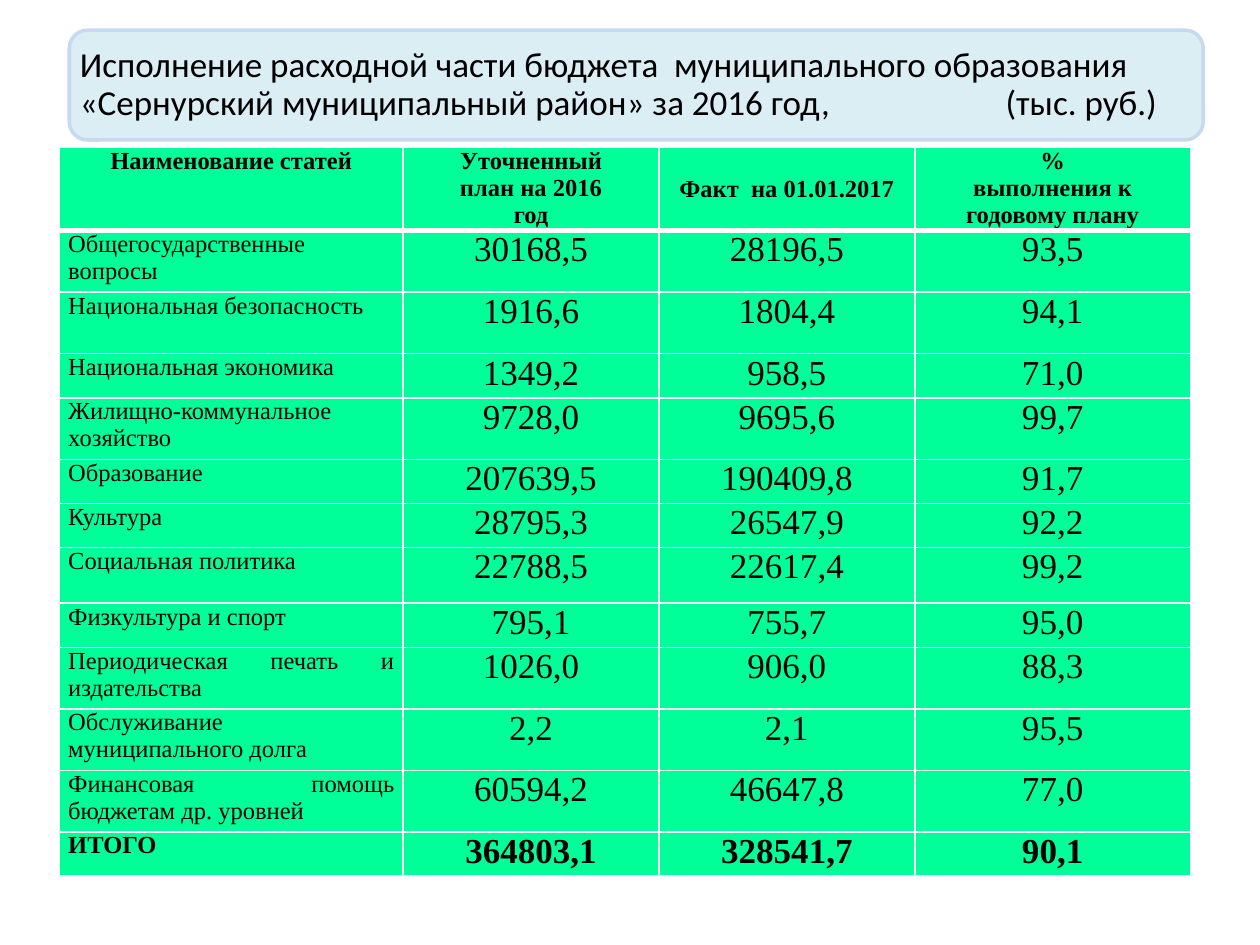
from typing import NamedTuple

from lxml.etree import SubElement
from pptx import Presentation
from pptx.dml.color import RGBColor
from pptx.enum.shapes import MSO_SHAPE
from pptx.enum.text import MSO_ANCHOR, MSO_AUTO_SIZE, PP_ALIGN
from pptx.oxml.ns import qn
from pptx.table import _Cell
from pptx.util import Pt

BLACK = RGBColor(0x00, 0x00, 0x00)
WHITE = RGBColor(0xFF, 0xFF, 0xFF)
MINT = RGBColor(0x00, 0xFF, 0x99)
PALE_BLUE = RGBColor(0xDB, 0xEE, 0xF4)
EDGE_BLUE = RGBColor(0xC6, 0xD9, 0xF1)

TITLE = (
    "Исполнение расходной части бюджета  муниципального образования "
    "«Сернурский муниципальный район» за 2016 год,\t(тыс. руб.)"
)
HEADINGS = (
    "Наименование статей",
    "Уточненный\nплан на 2016\nгод",
    "Факт  на 01.01.2017",
    "%\nвыполнения к\nгодовому плану",
)
COLUMN_WIDTHS = (196.4, 146.2, 146.2, 157.6)
HEADER_HEIGHT = 47.4
TALL, MEDIUM, SHORT = 35.2, 31.8, 25.2
LEFT, CENTER, JUSTIFY = PP_ALIGN.LEFT, PP_ALIGN.CENTER, PP_ALIGN.JUSTIFY


class Expense(NamedTuple):
    article: str
    plan: str
    fact: str
    percent: str
    height: float
    align: PP_ALIGN = JUSTIFY
    bold: bool = False


EXPENSES = (
    Expense("Общегосударственные вопросы", "30168,5", "28196,5", "93,5", TALL, LEFT),
    Expense("Национальная безопасность", "1916,6", "1804,4", "94,1", TALL, LEFT),
    Expense("Национальная экономика", "1349,2", "958,5", "71,0", SHORT, LEFT),
    Expense("Жилищно-коммунальное хозяйство", "9728,0", "9695,6", "99,7", TALL, LEFT),
    Expense("Образование", "207639,5", "190409,8", "91,7", SHORT),
    Expense("Культура", "28795,3", "26547,9", "92,2", SHORT),
    Expense("Социальная политика", "22788,5", "22617,4", "99,2", MEDIUM),
    Expense("Физкультура и спорт", "795,1", "755,7", "95,0", SHORT),
    Expense("Периодическая печать и издательства", "1026,0", "906,0", "88,3", TALL),
    Expense("Обслуживание муниципального долга", "2,2", "2,1", "95,5", TALL),
    Expense("Финансовая помощь бюджетам др. уровней", "60594,2", "46647,8", "77,0", TALL),
    Expense("ИТОГО", "364803,1", "328541,7", "90,1", SHORT, bold=True),
)


def set_borders(cell: _Cell, top: float, bottom: float) -> None:
    properties = cell._tc.get_or_add_tcPr()
    for side, width in (("L", 1), ("R", 1), ("T", top), ("B", bottom)):
        border = SubElement(properties, qn(f"a:ln{side}"), w=str(Pt(width)))
        paint = SubElement(border, qn("a:solidFill"))
        SubElement(paint, qn("a:srgbClr"), val=str(WHITE))


def fill_cell(cell: _Cell, text: str, size: float, align: PP_ALIGN, bold: bool,
              top: float = 1, bottom: float = 1) -> None:
    set_borders(cell, top, bottom)
    cell.fill.solid()
    cell.fill.fore_color.rgb = MINT
    cell.margin_left = cell.margin_right = Pt(5)
    cell.margin_top = cell.margin_bottom = Pt(0)
    cell.text = text
    for paragraph in cell.text_frame.paragraphs:
        paragraph.alignment = align
        font = paragraph.font
        font.name, font.size, font.bold = "Times New Roman", Pt(size), bold
        font.color.rgb = BLACK


def add_title(slide) -> None:
    title = slide.shapes.title
    title.left, title.top, title.width, title.height = Pt(39.6), Pt(17.2), Pt(648), Pt(62.8)
    panel = slide.shapes.add_shape(
        MSO_SHAPE.ROUNDED_RECTANGLE, title.left, title.top, title.width, title.height)
    panel.shadow.inherit = False
    panel.fill.solid()
    panel.fill.fore_color.rgb = PALE_BLUE
    panel.line.color.rgb = EDGE_BLUE
    panel.line.width = Pt(2)
    title._element.addprevious(panel._element)

    frame = title.text_frame
    frame.text = TITLE
    frame.word_wrap = True
    frame.auto_size = MSO_AUTO_SIZE.NONE
    frame.vertical_anchor = MSO_ANCHOR.MIDDLE
    frame.margin_left = frame.margin_right = Pt(6)
    frame.margin_top = frame.margin_bottom = Pt(6)
    paragraph = frame.paragraphs[0]
    paragraph.alignment = LEFT
    paragraph.line_spacing = 0.9
    tabs = SubElement(paragraph._p.get_or_add_pPr(), qn("a:tabLst"))
    SubElement(tabs, qn("a:tab"), pos=str(Pt(529)), algn="l")
    paragraph.font.name, paragraph.font.size = "Calibri", Pt(20)
    paragraph.font.color.rgb = BLACK


def add_budget_table(slide) -> None:
    heights = (HEADER_HEIGHT, *(expense.height for expense in EXPENSES))
    budget = slide.shapes.add_table(
        len(heights), len(COLUMN_WIDTHS), Pt(34), Pt(84.4),
        Pt(sum(COLUMN_WIDTHS)), Pt(sum(heights))).table
    budget.first_row = budget.horz_banding = False
    for column, width in zip(budget.columns, COLUMN_WIDTHS):
        column.width = Pt(width)
    for row, height in zip(budget.rows, heights):
        row.height = Pt(height)

    for index, heading in enumerate(HEADINGS):
        fill_cell(budget.cell(0, index), heading, 14, CENTER, True, bottom=3)
    budget.cell(0, 2).vertical_anchor = MSO_ANCHOR.MIDDLE
    for index, expense in enumerate(EXPENSES, start=1):
        top = 3 if index == 1 else 1
        fill_cell(budget.cell(index, 0), expense.article, 14, expense.align, expense.bold, top)
        amounts = (expense.plan, expense.fact, expense.percent)
        for column, amount in enumerate(amounts, start=1):
            fill_cell(budget.cell(index, column), amount, 20, CENTER, expense.bold, top)


def main() -> None:
    presentation = Presentation()
    presentation.slide_width, presentation.slide_height = Pt(720), Pt(540)
    slide = presentation.slides.add_slide(presentation.slide_layouts[5])
    add_title(slide)
    add_budget_table(slide)
    presentation.save("out.pptx")


if __name__ == "__main__":
    main()
